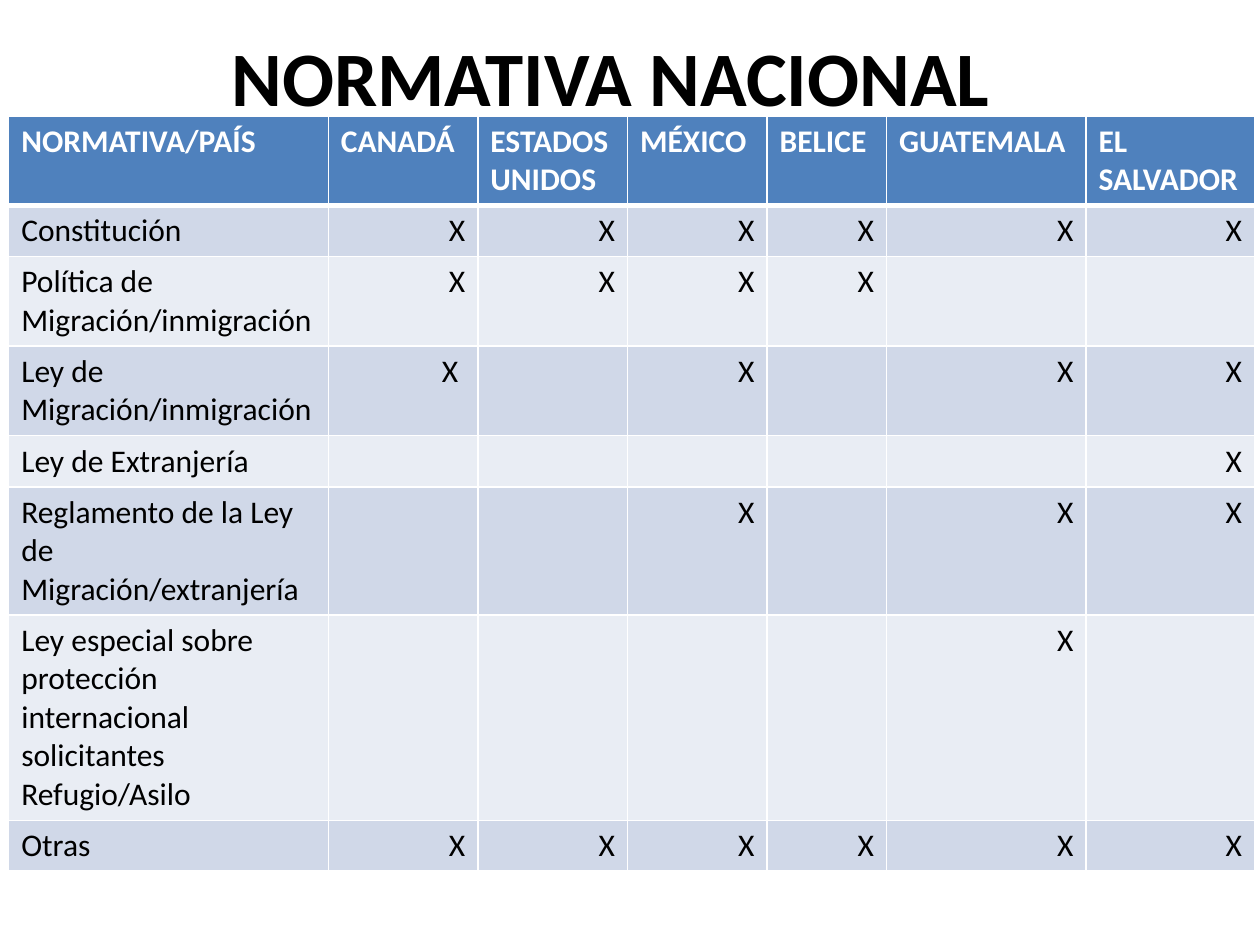
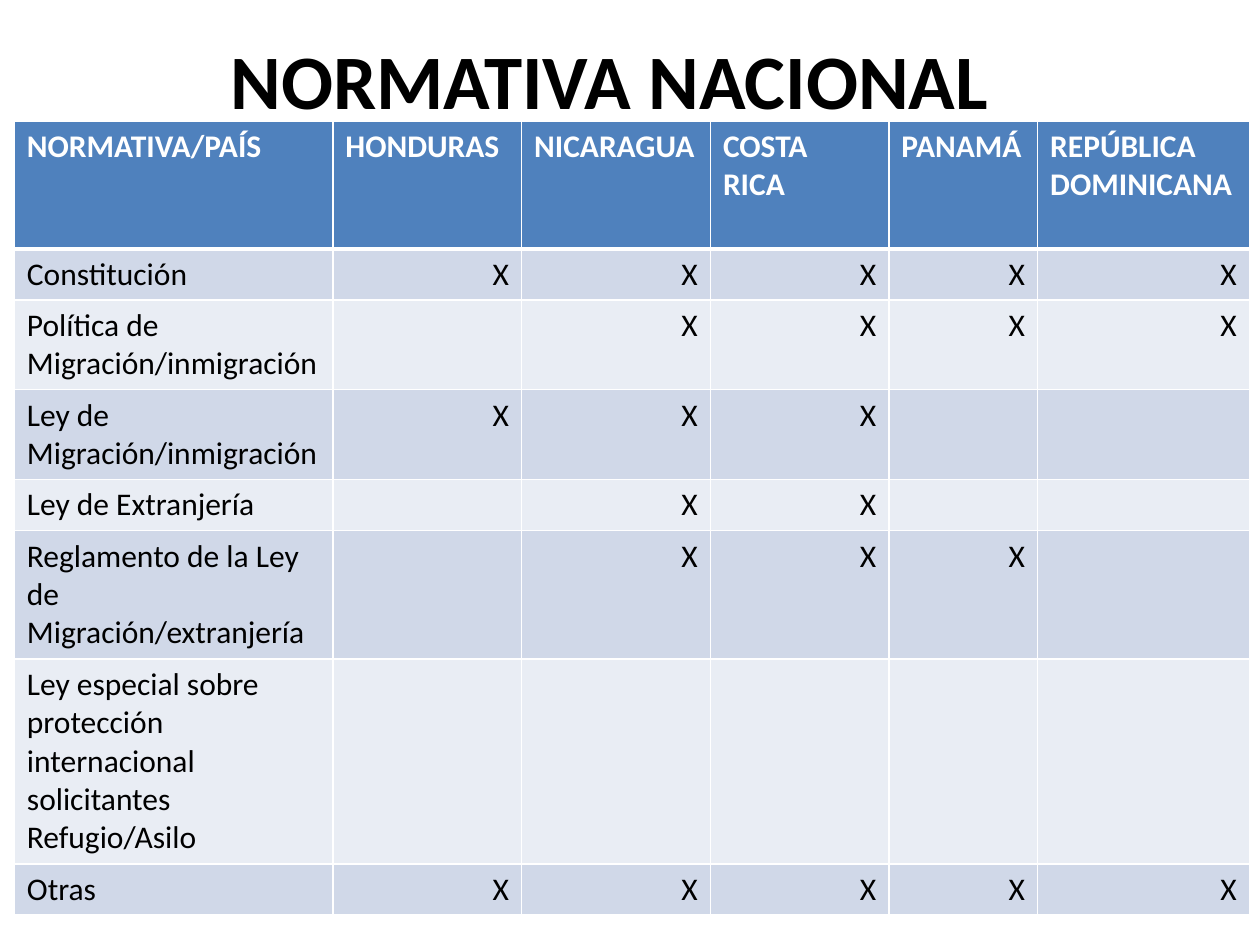
from lxml.etree import SubElement
from pptx import Presentation
from pptx.dml.color import RGBColor
from pptx.enum.text import MSO_ANCHOR, PP_ALIGN
from pptx.oxml.ns import qn
from pptx.util import Pt

COLORS = {"text": "000000", "white": "FFFFFF", "header": "4F81BD",
          "band_dark": "D0D8E8", "band_light": "E9EDF4"}
FONT = "Calibri"
TITLE = "NORMATIVA NACIONAL"
CORNER = "NORMATIVA/PAÍS"
REGULATIONS = [
    "Constitución",
    "Política de Migración/inmigración",
    "Ley de Migración/inmigración",
    "Ley de Extranjería",
    "Reglamento de la Ley de Migración/extranjería",
    "Ley especial sobre protección internacional solicitantes Refugio/Asilo",
    "Otras",
]
ROW_HEIGHTS = [29.2, 51.2, 51.2, 29.4, 73.2, 117.2, 29]


class Deck:
    """Holds the shared style and the current slide."""

    def __init__(self):
        self.presentation = Presentation()
        self.presentation.slide_width = Pt(720)
        self.presentation.slide_height = Pt(540)
        self.slide = None

    def new_slide(self):
        self.slide = self.presentation.slides.add_slide(self.presentation.slide_layouts[6])

    def add_text(self, paragraph, text, size, color, bold=False, align=PP_ALIGN.LEFT):
        paragraph.alignment = align
        run = paragraph.add_run()
        run.text = text
        run.font.name = FONT
        run.font.size = Pt(size)
        run.font.bold = bold
        run.font.color.rgb = RGBColor.from_string(COLORS[color])

    def title(self, left, top):
        shape = self.slide.shapes.add_textbox(Pt(left), Pt(top), Pt(648), Pt(90))
        frame = shape.text_frame
        frame.word_wrap = True
        frame.vertical_anchor = MSO_ANCHOR.MIDDLE
        self.add_text(frame.paragraphs[0], TITLE, 44, "text", True, PP_ALIGN.CENTER)

    def style_cell(self, cell, fill, top=1, bottom=1):
        # Borders come before the fill in the cell properties
        properties = cell._tc.get_or_add_tcPr()
        for side, width in (("L", 1), ("R", 1), ("T", top), ("B", bottom)):
            line = SubElement(properties, qn(f"a:ln{side}"), w=str(Pt(width)))
            line_fill = SubElement(line, qn("a:solidFill"))
            SubElement(line_fill, qn("a:srgbClr"), val=COLORS["white"])
        cell.fill.solid()
        cell.fill.fore_color.rgb = RGBColor.from_string(COLORS[fill])

    def matrix(self, left, top, header_height, widths, countries, marks):
        heights = [header_height] + ROW_HEIGHTS
        table = self.slide.shapes.add_table(
            len(heights), len(widths), Pt(left), Pt(top),
            Pt(sum(widths)), Pt(sum(heights))).table
        for column, width in zip(table.columns, widths):
            column.width = Pt(width)
        for row, height in zip(table.rows, heights):
            row.height = Pt(height)

        # Header row
        for column, text in enumerate([CORNER] + countries):
            cell = table.cell(0, column)
            self.style_cell(cell, "header", bottom=3)
            self.add_text(cell.text_frame.paragraphs[0], text, 18, "white", True)

        # One banded row per regulation
        for row, (regulation, row_marks) in enumerate(zip(REGULATIONS, marks), 1):
            band = "band_dark" if row % 2 else "band_light"
            for column, text in enumerate([regulation] + row_marks.split("|")):
                cell = table.cell(row, column)
                self.style_cell(cell, band, top=3 if row == 1 else 1)
                if text:
                    align = PP_ALIGN.RIGHT if column else PP_ALIGN.LEFT
                    self.add_text(cell.text_frame.paragraphs[0], text, 18, "text", align=align)


def main():
    deck = Deck()

    # Northern countries
    deck.new_slide()
    deck.title(25.2, -2)
    deck.matrix(
        5, 66.2, 51.2, [182.6, 85.5, 85.5, 79.8, 68.3, 113.9, 96.4],
        ["CANADÁ", "ESTADOS UNIDOS", "MÉXICO", "BELICE", "GUATEMALA", "EL SALVADOR"],
        ["X|X|X|X|X|X",
         "X|X|X|X||",
         "X ||X||X|X",
         "|||||X",
         "||X||X|X",
         "||||X|",
         "X|X|X|X|X|X"])

    # Southern countries
    deck.new_slide()
    deck.title(24.5, 0)
    deck.matrix(
        8.2, 69.1, 73.2, [182, 107.9, 107.9, 102, 85, 121],
        ["HONDURAS", "NICARAGUA", "COSTA RICA", "PANAMÁ", "REPÚBLICA DOMINICANA"],
        ["X|X|X|X|X",
         "|X|X|X|X",
         "X|X|X||",
         "|X|X||",
         "|X|X|X|",
         "||||",
         "X|X|X|X|X"])

    deck.presentation.save("out.pptx")


if __name__ == "__main__":
    main()
